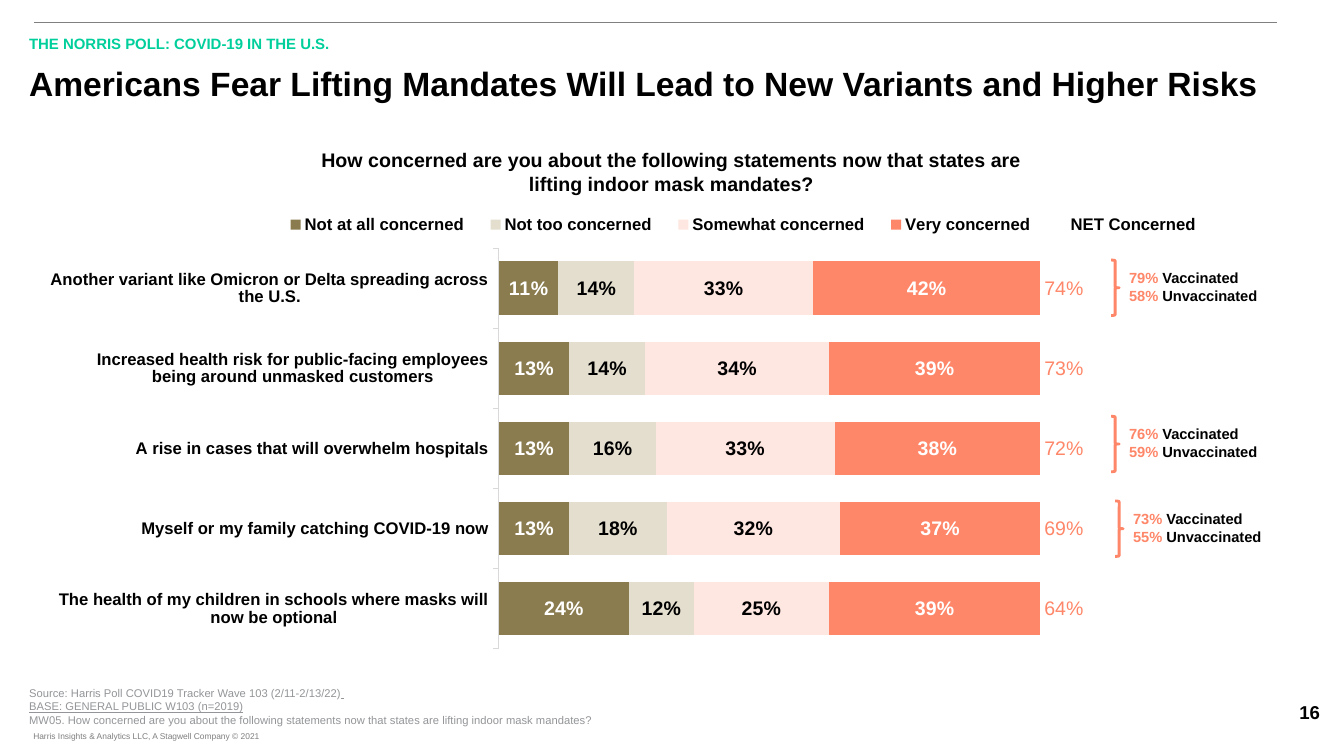
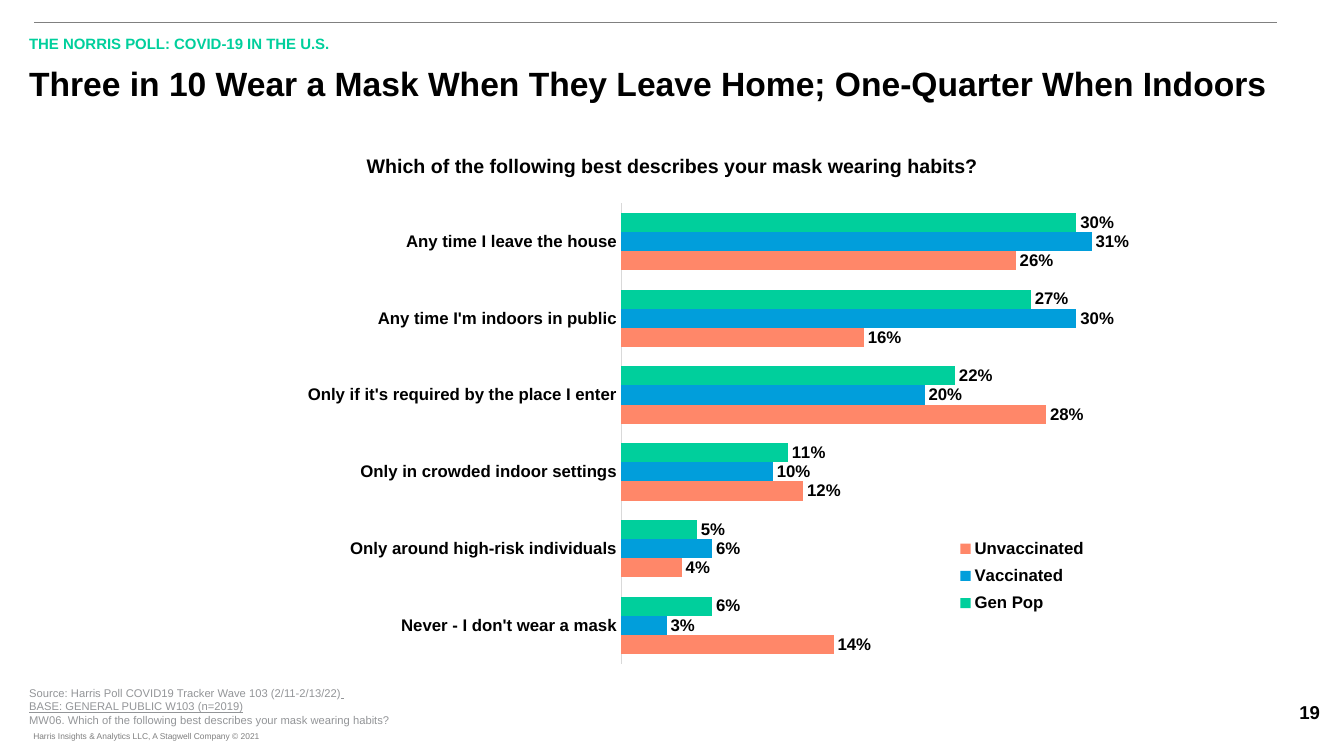
"""Build two survey slides with bar charts and save them as out.pptx."""
from dataclasses import dataclass

from lxml import etree
from pptx import Presentation
from pptx.chart.data import CategoryChartData
from pptx.dml.color import RGBColor
from pptx.enum.chart import (XL_CHART_TYPE, XL_LABEL_POSITION,
                             XL_LEGEND_POSITION, XL_TICK_LABEL_POSITION,
                             XL_TICK_MARK)
from pptx.enum.shapes import MSO_CONNECTOR, MSO_SHAPE
from pptx.enum.text import PP_ALIGN
from pptx.oxml.ns import qn
from pptx.util import Inches, Pt

BLACK = RGBColor(0x00, 0x00, 0x00)
WHITE = RGBColor(0xFF, 0xFF, 0xFF)
GREEN = RGBColor(0x00, 0xCF, 0x9C)
BLUE = RGBColor(0x01, 0x9E, 0xDB)
CORAL = RGBColor(0xFF, 0x87, 0x69)
BLUSH = RGBColor(0xFF, 0xE7, 0xE1)
OLIVE = RGBColor(0x8A, 0x7C, 0x4F)
SAND = RGBColor(0xE3, 0xDE, 0xCE)
RULE = RGBColor(0x80, 0x80, 0x80)
SMALL = RGBColor(0x7F, 0x7F, 0x7F)
NOTE = RGBColor(0x93, 0x95, 0x98)
AXIS = RGBColor(0xD9, 0xD9, 0xD9)

FONT = "Arial"
LEFT, CENTER = PP_ALIGN.LEFT, PP_ALIGN.CENTER
STACKED = XL_CHART_TYPE.BAR_STACKED_100
CLUSTER = XL_CHART_TYPE.BAR_CLUSTERED
TOP, RIGHT = XL_LEGEND_POSITION.TOP, XL_LEGEND_POSITION.RIGHT
MIDDLE, BASE = XL_LABEL_POSITION.CENTER, XL_LABEL_POSITION.INSIDE_BASE
OUTER = XL_LABEL_POSITION.OUTSIDE_END
TICK, BARE = XL_TICK_MARK.OUTSIDE, XL_TICK_MARK.NONE
LOW = XL_TICK_LABEL_POSITION.NEXT_TO_AXIS
BRACE = MSO_SHAPE.RIGHT_BRACE
LINE = MSO_CONNECTOR.STRAIGHT


@dataclass
class Run:
    """A stretch of text with one format."""
    text: str
    color: RGBColor = BLACK
    under: bool = False


@dataclass
class Series:
    """One data series with its fill and labels."""
    name: str
    vals: list[float]
    fill: RGBColor | None
    ink: RGBColor = BLACK
    place: XL_LABEL_POSITION = MIDDLE
    texts: tuple[str, ...] = ()


@dataclass
class Plot:
    """A bar chart with its place and layout."""
    kind: XL_CHART_TYPE
    box: tuple[float, ...]
    cats: list[str]
    rows: list[Series]
    gap: int
    lap: int
    tick: XL_TICK_MARK
    size: float
    area: tuple[float, ...]
    side: XL_LEGEND_POSITION
    key: tuple[float, ...]
    top: float | None = None


@dataclass
class Split:
    """A brace with the shares by vaccine status."""
    left: float
    top: float
    yes: str
    no: str


@dataclass
class Page:
    """The content of one slide."""
    number: int
    title: str
    ask: str
    ask_box: tuple[float, ...]
    code: str
    plot: Plot
    splits: tuple[Split, ...] = ()


def add_text(shapes, box: tuple[float, ...], lines: list[list[Run]], size: float,
             bold: bool = False, align: PP_ALIGN = LEFT, wrap: bool = True):
    """Add a text box and return its frame."""
    frame = shapes.add_textbox(*map(Inches, box)).text_frame
    frame.word_wrap = wrap
    for i, line in enumerate(lines):
        para = frame.add_paragraph() if i else frame.paragraphs[0]
        para.alignment = align
        for part in line:
            run = para.add_run()
            run.text = part.text
            run.font.name, run.font.size = FONT, Pt(size)
            run.font.bold, run.font.underline = bold, part.under
            run.font.color.rgb = part.color
    return frame


def set_font(font, size: float, color: RGBColor = BLACK, bold: bool = True) -> None:
    """Format a font."""
    font.name, font.size, font.bold = FONT, Pt(size), bold
    font.color.rgb = color


def make_layout(box: tuple[float, ...], inner: bool):
    """Return a manual chart layout element."""
    layout = etree.Element(qn("c:layout"))
    manual = etree.SubElement(layout, qn("c:manualLayout"))
    items = [("layoutTarget", "inner")] if inner else []
    items += [("xMode", "edge"), ("yMode", "edge")]
    items += [(name, str(val)) for name, val in zip("xywh", box)]
    for name, val in items:
        etree.SubElement(manual, qn(f"c:{name}")).set("val", val)
    return layout


def place_parts(chart, plot: Plot) -> None:
    """Fix the plot area and the legend in place."""
    area = chart.element.xpath("c:chart/c:plotArea")[0]
    legend = chart.element.xpath("c:chart/c:legend")[0]
    for part in (area, legend):
        for old in part.findall(qn("c:layout")):
            part.remove(old)
    area.insert(0, make_layout(plot.area, True))
    legend.find(qn("c:legendPos")).addnext(make_layout(plot.key, False))


def style_row(series, row: Series, size: float) -> None:
    """Fill one series and label its bars."""
    if row.fill is None:
        series.format.fill.background()
    else:
        series.format.fill.solid()
        series.format.fill.fore_color.rgb = row.fill
    labels = series.data_labels
    labels.show_value = True
    labels.number_format, labels.number_format_is_linked = "0%", False
    labels.position = row.place
    set_font(labels.font, size, row.ink)
    for i, text in enumerate(row.texts):
        label = series.points[i].data_label
        label.text_frame.text = text
        set_font(label.text_frame.paragraphs[0].runs[0].font, size, row.ink, False)
        label.position = row.place


def add_plot(slide, plot: Plot) -> None:
    """Add a bar chart."""
    data = CategoryChartData(number_format="0%")
    data.categories = plot.cats
    for row in plot.rows:
        data.add_series(row.name, row.vals)
    chart = slide.shapes.add_chart(plot.kind, *map(Inches, plot.box), data).chart
    chart.has_title = False
    set_font(chart.font, plot.size, bold=False)
    bars = chart.plots[0]
    bars.gap_width, bars.overlap = plot.gap, plot.lap
    bars.vary_by_categories = False
    for series, row in zip(bars.series, plot.rows):
        style_row(series, row, plot.size)
    cat, val = chart.category_axis, chart.value_axis
    cat.reverse_order = True
    cat.major_tick_mark, cat.minor_tick_mark = plot.tick, BARE
    cat.tick_label_position = LOW
    cat.format.line.color.rgb, cat.format.line.width = AXIS, Pt(0.75)
    set_font(cat.tick_labels.font, 12)
    val.visible = val.has_major_gridlines = False
    if plot.top:
        val.maximum_scale = plot.top
    chart.has_legend = True
    chart.legend.position = plot.side
    chart.legend.include_in_layout = False
    set_font(chart.legend.font, 12)
    place_parts(chart, plot)


def add_split(slide, split: Split) -> None:
    """Add a brace and its two shares as a group."""
    shapes = slide.shapes.add_group_shape().shapes
    lines = [[Run(f"{split.yes} ", CORAL), Run("Vaccinated")],
             [Run(f"{split.no} ", CORAL), Run("Unvaccinated")]]
    add_text(shapes, (split.left + 0.08, split.top + 0.04, 2.34, 0.47), lines, 10.5, True)
    brace = shapes.add_shape(BRACE, *map(Inches, (split.left, split.top, 0.08, 0.55)))
    brace.shadow.inherit = False
    brace.fill.background()
    brace.line.color.rgb, brace.line.width = CORAL, Pt(2)


def add_frame(slide, page: Page) -> None:
    """Add the rule, titles and footers all slides share."""
    shapes = slide.shapes
    rule = shapes.add_connector(LINE, *map(Inches, (0.34, 0.22, 12.67, 0.22)))
    rule.line.color.rgb, rule.line.width = RULE, Pt(0.5)
    etree.SubElement(rule.element.spPr, qn("a:effectLst"))
    add_text(shapes, (12.48, 6.9, 1.02, 0.33), [[Run(str(page.number))]], 13.3, True, CENTER)
    owner = "Harris Insights & Analytics LLC, A Stagwell Company © 2021"
    foot = add_text(shapes, (0.33, 7.2, 2.39, 0.2), [[Run(owner, SMALL)]], 6, wrap=False)
    foot.margin_left = 0
    add_text(shapes, (0.19, 0.29, 4, 0.28),
             [[Run("THE NORRIS POLL: COVID-19 IN THE U.S.", GREEN)]], 10.7, True)
    add_text(shapes, (0.19, 0.57, 13.14, 0.79), [[Run(page.title)]], 24, True)
    add_text(shapes, page.ask_box, [[Run(page.ask)]], 14, True, CENTER)
    source = [[Run("Source: Harris Poll COVID19 Tracker Wave 103 (2/11-2/13/22)", NOTE),
               Run(" ", NOTE, True)],
              [Run("BASE: GENERAL PUBLIC W103 (n=2019)", NOTE, True)],
              [Run(f"{page.code}. {page.ask}", NOTE)]]
    add_text(shapes, (0.19, 6.76, 12.79, 0.5), source, 8)


FEARS = Plot(
    STACKED, (0.5, 2.05, 12.83, 4.39),
    ["Another variant like Omicron or Delta spreading across the U.S.",
     "Increased health risk for public-facing employees being around unmasked customers",
     "A rise in cases that will overwhelm hospitals",
     "Myself or my family catching COVID-19 now",
     "The health of my children in schools where masks will now be optional"],
    [Series("Not at all concerned", [0.11, 0.13, 0.13, 0.13, 0.24], OLIVE, WHITE),
     Series("Not too concerned", [0.14, 0.14, 0.16, 0.18, 0.12], SAND),
     Series("Somewhat concerned", [0.33, 0.34, 0.33, 0.32, 0.25], BLUSH),
     Series("Very concerned", [0.42, 0.39, 0.38, 0.37, 0.39], CORAL, WHITE),
     Series("NET Concerned", [0.05] * 5, None, CORAL, BASE,
            ("74%", "73%", "72%", "69%", "64%"))],
    50, 100, TICK, 14, (0.298, 0.094, 0.531, 0.906),
    TOP, (0.164, 0.006, 0.737, 0.07), 1.1)

HABITS = Plot(
    CLUSTER, (1.9, 1.98, 9.53, 4.61),
    ["Any time I leave the house", "Any time I'm indoors in public",
     "Only if it's required by the place I enter", "Only in crowded indoor settings",
     "Only around high-risk individuals", "Never - I don't wear a mask"],
    [Series("Gen Pop", [0.3, 0.27, 0.22, 0.11, 0.05, 0.06], GREEN, place=OUTER),
     Series("Vaccinated", [0.31, 0.3, 0.2, 0.1, 0.06, 0.03], BLUE, place=OUTER),
     Series("Unvaccinated", [0.26, 0.16, 0.28, 0.12, 0.04, 0.14], CORAL, place=OUTER)],
    100, 0, BARE, 12, (0.447, 0.008, 0.553, 0.992),
    RIGHT, (0.792, 0.713, 0.145, 0.196))

PAGES = (
    Page(16, "Americans Fear Lifting Mandates Will Lead to New Variants and Higher Risks",
         "How concerned are you about the following statements now that states are "
         "lifting indoor mask mandates?", (3.03, 1.42, 7.26, 0.57), "MW05", FEARS,
         (Split(11.02, 2.58, "79%", "58%"), Split(11.02, 4.13, "76%", "59%"),
          Split(11.06, 4.97, "73%", "55%"))),
    Page(19, "Three in 10 Wear a Mask When They Leave Home; One-Quarter When Indoors",
         "Which of the following best describes your mask wearing habits?",
         (0.97, 1.48, 11.4, 0.34), "MW06", HABITS),
)


def main() -> None:
    """Build and save the slides."""
    deck = Presentation()
    deck.slide_width, deck.slide_height = Inches(13.33), Inches(7.5)
    for page in PAGES:
        slide = deck.slides.add_slide(deck.slide_layouts[6])
        add_plot(slide, page.plot)
        add_frame(slide, page)
        for split in page.splits:
            add_split(slide, split)
    deck.save("out.pptx")


if __name__ == "__main__":
    main()
